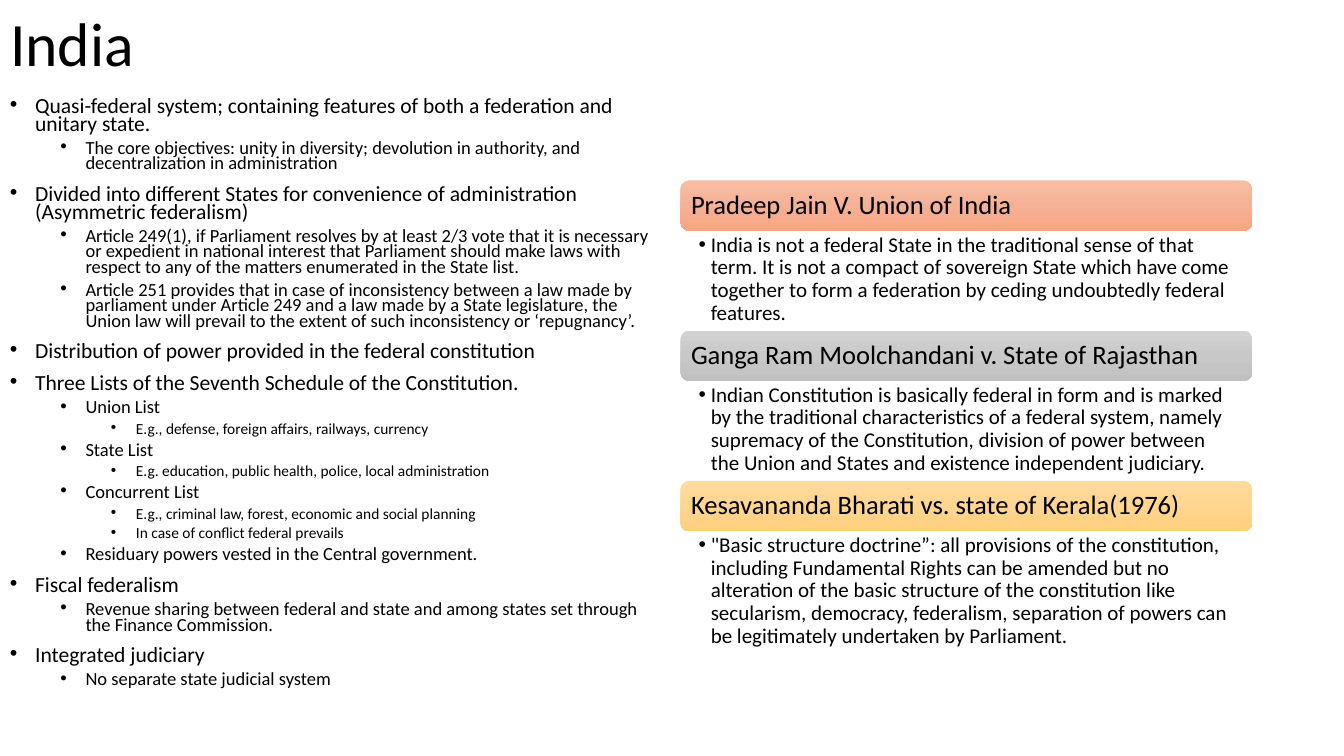
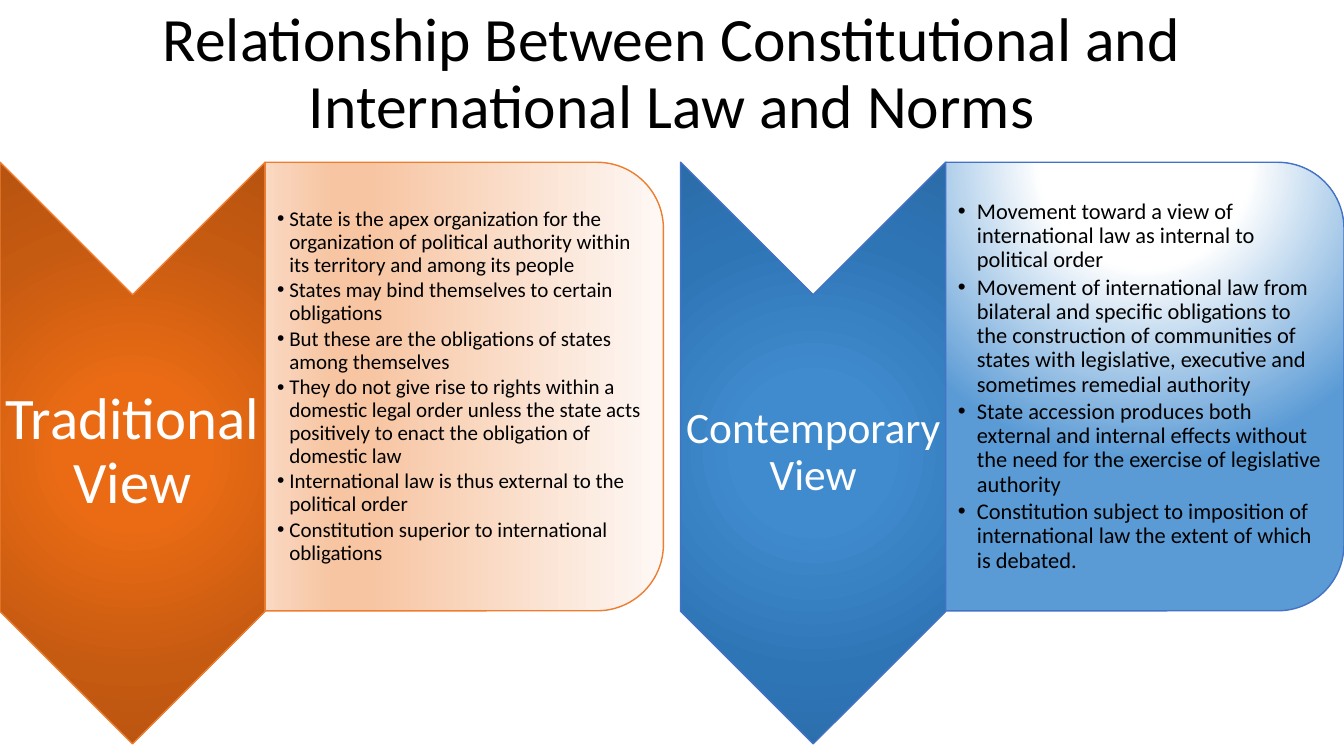
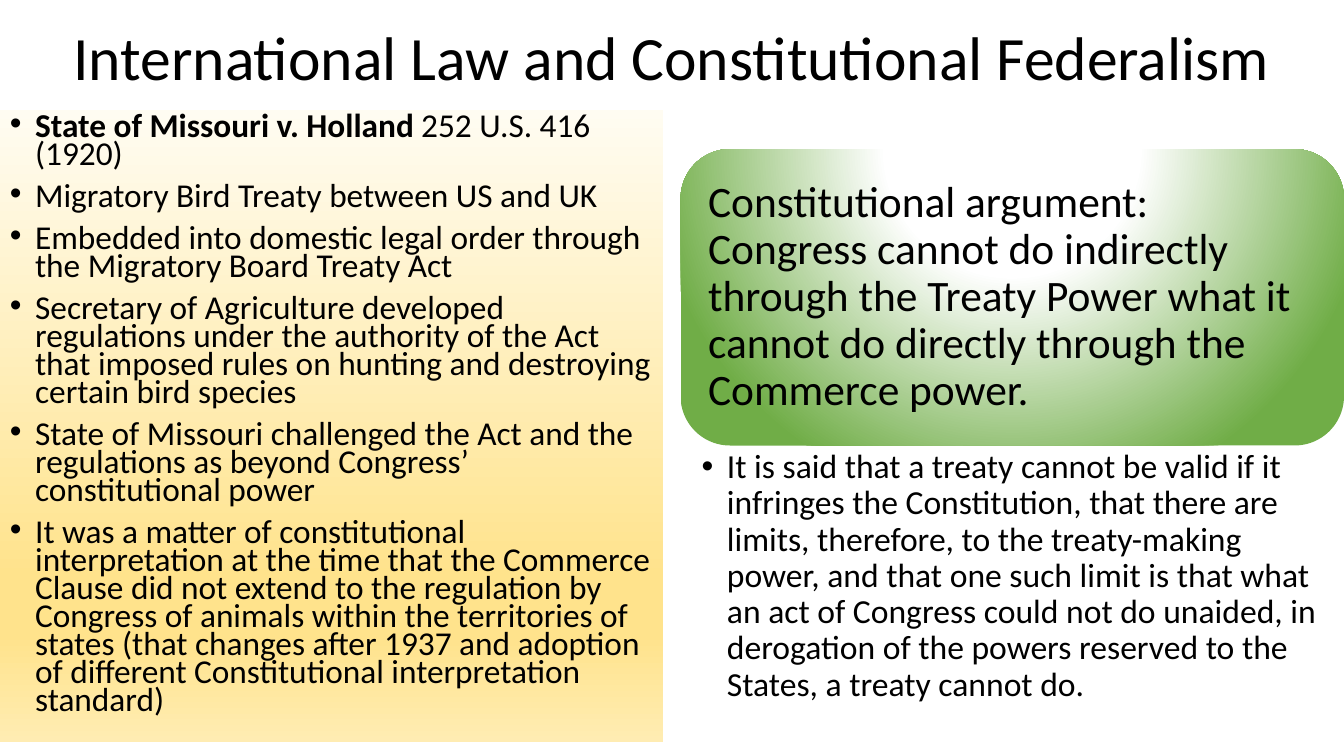
from dataclasses import dataclass
from lxml import etree
from pptx import Presentation
from pptx.dml.color import RGBColor as Rgb
from pptx.enum.shapes import MSO_SHAPE as Shape
from pptx.enum.text import MSO_ANCHOR as Anchor, MSO_AUTO_SIZE as Auto, PP_ALIGN as Align
from pptx.oxml.ns import qn
from pptx.util import Pt

PX = 9144  # EMU in one px, 100 px to the inch
WIDE, HIGH = 1333, 750
HALF, RIGHT = 658, 675  # column width, left edge of second column


# Theme
@dataclass
class Style:
    size: float
    color: str = "000000"
    lines: float = 0.9
    before: float = 0
    after: float = 0  # share of the type size
    left: int = 0
    hang: int = 0  # bullet hangs by this much
    align: Align = Align.LEFT


class Theme:
    font = "Calibri"
    title = Style(44)
    center = Style(44, align=Align.CENTER)
    body = [
        Style(15.4, lines=0.7, before=10, left=25, hang=25),
        Style(13.2, lines=0.7, before=5, left=75, hang=25),
        Style(11, lines=0.7, before=5, left=125, hang=25),
    ]
    facts = [Style(23.8, lines=0.7, before=10, left=25, hang=25)]
    head = [Style(19, after=0.35)]
    case = [Style(15, after=0.2, left=12, hang=12)]
    claim = [Style(31, after=0.35)]
    quote = [Style(24, after=0.2, left=25, hang=25)]
    # Gradients: (stops, focus), linear downwards where focus is None
    center_glow = (50, 50, 50, 50)
    top_glow = (50, -80, 50, 180)
    red = ([(0, "F7BDA5"), (50, "F5B196"), (100, "F8A582")], None)
    gray = ([(0, "D2D2D2"), (50, "C8C8C8"), (100, "C0C0C0")], None)
    gold = ([(0, "FFDB9E"), (50, "FFD590"), (100, "FFD07C")], None)
    cream = ([(0, "FFFCF2"), (74, "FFE38C"), (83, "FFE38C"), (100, "FFECB2")], None)
    peach = ([(0, "FEF8F5"), (74, "F7C5A2"), (83, "F7C5A2"), (100, "FAD8C1")], None)
    rust = ([(0, "EA6B14"), (23, "EA6B14"), (69, "C55A11"), (97, "B85410")], center_glow)
    blue = ([(0, "408BCE"), (23, "408BCE"), (69, "2E75B6"), (97, "2B6DA9")], center_glow)
    sky = ([(0, "FFFFFF"), (35, "FFFFFF"), (100, "5B9BD5")], top_glow)
    green = ([(0, "FFFFFF"), (35, "FFFFFF"), (100, "70AD47")], top_glow)


# Content: (level, text)
INDIA = [
    (0, "Quasi-federal system; containing features of both a federation and unitary state."),
    (1, "The core objectives: unity in diversity; devolution in authority, and decentralization in administration"),
    (0, "Divided into different States for convenience of administration (Asymmetric federalism)"),
    (1, "Article 249(1), if Parliament resolves by at least 2/3 vote that it is necessary or expedient in national "
        "interest that Parliament should make laws with respect to any of the matters enumerated in the State list."),
    (1, "Article 251 provides that in case of inconsistency between a law made by parliament under Article 249 and a "
        "law made by a State legislature, the Union law will prevail to the extent of such inconsistency or "
        "‘repugnancy’."),
    (0, "Distribution of power provided in the federal constitution"),
    (0, "Three Lists of the Seventh Schedule of the Constitution."),
    (1, "Union List"),
    (2, "E.g., defense, foreign affairs, railways, currency"),
    (1, "State List"),
    (2, "E.g. education, public health, police, local administration"),
    (1, "Concurrent List"),
    (2, "E.g., criminal law, forest, economic and social planning"),
    (2, "In case of conflict federal prevails"),
    (1, "Residuary powers vested in the Central government."),
    (0, "Fiscal federalism"),
    (1, "Revenue sharing between federal and state and among states set through the Finance Commission."),
    (0, "Integrated judiciary"),
    (1, "No separate state judicial system"),
]

# Name, finding, height of the finding, gradient
CASES = [
    ("Pradeep Jain V. Union of India",
     "India is not a federal State in the traditional sense of that term. It is not a compact of sovereign State "
     "which have come together to form a federation by ceding undoubtedly federal features.", 99, Theme.red),
    ("Ganga Ram Moolchandani v. State of Rajasthan",
     "Indian Constitution is basically federal in form and is marked by the traditional characteristics of a federal "
     "system, namely supremacy of the Constitution, division of power between the Union and States and existence "
     "independent judiciary.", 99, Theme.gray),
    ("Kesavananda Bharati vs. state of Kerala(1976)",
     "\"Basic structure doctrine”: all provisions of the constitution, including Fundamental Rights can be amended "
     "but no alteration of the basic structure of the constitution like secularism, democracy, federalism, "
     "separation of powers can be legitimately undertaken by Parliament.", 120, Theme.gold),
]

VIEWS = [
    dict(name="Traditional View", size=42, left=0, arrow=Theme.rust, panel=Theme.peach, line="ED7D31",
         pad=3, type=15, hang=12, points=[
             "State is the apex organization for the organization of political authority within its territory and "
             "among its people",
             "States may bind themselves to certain obligations",
             "But these are the obligations of states among themselves",
             "They do not give rise to rights within a domestic legal order unless the state acts positively to enact "
             "the obligation of domestic law",
             "International law is thus external to the political order",
             "Constitution superior to international obligations",
         ]),
    dict(name="Contemporary View", size=31, left=RIGHT, arrow=Theme.blue, panel=Theme.sky, line="4472C4",
         pad=2, type=16, hang=19, points=[
             "Movement toward a view of international law as internal to political order",
             "Movement of international law from bilateral and specific obligations to the construction of "
             "communities of states with legislative, executive and sometimes remedial authority",
             "State accession produces both external and internal effects without the need for the exercise of "
             "legislative authority",
             "Constitution subject to imposition of international law the extent of which is debated.",
         ]),
]

LEAD = "State of Missouri v. Holland "
FACTS = [
    LEAD + "252 U.S. 416 (1920)",
    "Migratory Bird Treaty between US and UK",
    "Embedded into domestic legal order through the Migratory Board Treaty Act",
    "Secretary of Agriculture developed regulations under the authority of the Act that imposed rules on hunting and "
    "destroying certain bird species",
    "State of Missouri challenged the Act and the regulations as beyond Congress’ constitutional power",
    "It was a matter of constitutional interpretation at the time that the Commerce Clause did not extend to the "
    "regulation by Congress of animals within the territories of states (that changes after 1937 and adoption of "
    "different Constitutional interpretation standard)",
]
CLAIM = ("Constitutional argument: Congress cannot do indirectly through the Treaty Power what it cannot do directly "
         "through the Commerce power.")
QUOTE = ("It is said that a treaty cannot be valid if it infringes the Constitution, that there are limits, therefore, "
         "to the treaty-making power, and that one such limit is that what an act of Congress could not do unaided, "
         "in derogation of the powers reserved to the States, a treaty cannot do.")


# Helpers
def emu(box):
    return [round(side * PX) for side in box]


def shade(shape, grad):
    """Fill a shape with a gradient of any number of stops."""
    stops, focus = grad
    shape.fill.background()
    props = shape.fill._xPr
    node = etree.Element(qn("a:gradFill"), rotWithShape="1")
    props.replace(props.find(qn("a:noFill")), node)
    row = etree.SubElement(node, qn("a:gsLst"))
    for pos, color in stops:
        stop = etree.SubElement(row, qn("a:gs"), pos=str(pos * 1000))
        etree.SubElement(stop, qn("a:srgbClr"), val=color)
    if focus:
        ring = etree.SubElement(node, qn("a:path"), path="circle")
        edges = {side: str(val * 1000) for side, val in zip("ltrb", focus)}
        etree.SubElement(ring, qn("a:fillToRect"), edges)
    else:
        etree.SubElement(node, qn("a:lin"), ang="5400000", scaled="0")


def draw(slide, kind, box, grad, line=None, turn=False):
    """Add a preset shape; a turned one still covers the given box."""
    x, y, w, h = box
    if turn:
        x, y, w, h = x + (w - h) / 2, y + (h - w) / 2, h, w
    shape = slide.shapes.add_shape(kind, *emu((x, y, w, h)))
    shape.rotation = 90 if turn else 0
    shape.shadow.inherit = False
    shade(shape, grad)
    if line:
        shape.line.color.rgb = Rgb.from_string(line)
        shape.line.width = Pt(1)
    else:
        shape.line.fill.background()
    return shape


def dress(par, style, first):
    props = par._p.get_or_add_pPr()
    if style.hang:
        props.set("marL", str(style.left * PX))
        props.set("indent", str(-style.hang * PX))
        etree.SubElement(props, qn("a:buFont"), typeface="Arial")
        etree.SubElement(props, qn("a:buChar"), char="•")
    par.alignment = style.align
    par.line_spacing = style.lines
    par.space_before = Pt(0 if first else style.before)
    par.space_after = Pt(round(style.size * style.after, 2))
    for run in par.runs:
        run.font.name = Theme.font
        run.font.size = Pt(style.size)
        run.font.color.rgb = Rgb.from_string(style.color)


def write(shape, items, styles, pad=(10, 5, 10, 5), anchor=Anchor.TOP):
    """Set (level, text) items in a shape, styled by level."""
    frame = shape.text_frame
    frame.word_wrap = True
    frame.auto_size = Auto.NONE
    frame.vertical_anchor = anchor
    (frame.margin_left, frame.margin_top,
     frame.margin_right, frame.margin_bottom) = emu(pad)
    frame.text = "\n".join(text for _, text in items)
    for num, (par, (level, _)) in enumerate(zip(frame.paragraphs, items)):
        dress(par, styles[level], num == 0)


def label(slide, box, *rest, **more):
    shape = slide.shapes.add_textbox(*emu(box))
    write(shape, *rest, **more)


def start(deck, text, box, style):
    """Add a slide with its title."""
    slide = deck.slides.add_slide(deck.slide_layouts[5])
    title = slide.shapes.title
    title.left, title.top, title.width, title.height = emu(box)
    write(title, [(0, text)], [style], anchor=Anchor.MIDDLE)
    return slide


# Slides
def india(deck):
    slide = start(deck, "India", (0, 0, 285, 93), Theme.title)
    label(slide, (0, 93, HALF, 657), INDIA, Theme.body)
    top, wide, bar = 179, 567, 50
    for name, text, high, grad in CASES:
        head = draw(slide, Shape.ROUNDED_RECTANGLE, (RIGHT, top, wide, bar), grad)
        write(head, [(0, name)], Theme.head, (8, 8, 8, 8), Anchor.MIDDLE)
        label(slide, (RIGHT, top + bar, wide, high), [(0, text)], Theme.case, (18, 3, 15, 3))
        top += bar + high


def views(deck):
    slide = start(deck, "Relationship Between Constitutional and International Law and Norms",
                  (0, 2, WIDE, 145), Theme.center)
    top, wide = 161, 263
    for view in VIEWS:
        x = view["left"]
        # Arrow and its name
        draw(slide, Shape.CHEVRON, (x, top, wide, 577), view["arrow"], view["line"], turn=True)
        name = Style(view["size"], "FFFFFF", after=0.35, align=Align.CENTER)
        label(slide, (x, 292, wide, 314), [(0, view["name"])], [name],
              (view["pad"],) * 4, Anchor.MIDDLE)
        # Panel and its points
        draw(slide, Shape.ROUND_2_SAME_RECTANGLE, (x + wide, top, HALF - wide, 445),
             view["panel"], view["line"], turn=True)
        point = Style(view["type"], after=0.15, left=view["hang"], hang=view["hang"])
        label(slide, (x + wide, 180, 376, 407), [(0, text) for text in view["points"]],
              [point], (12, 1, 1, 1), Anchor.MIDDLE)


def treaty(deck):
    slide = start(deck, "International Law and Constitutional Federalism",
                  (0, 0, WIDE, 120), Theme.center)
    # Facts, with the case name in bold
    facts = draw(slide, Shape.RECTANGLE, (0, 109, HALF, 627), Theme.cream)
    write(facts, [(0, text) for text in FACTS], Theme.facts)
    first = facts.text_frame.paragraphs[0]
    first.text = LEAD
    first.add_run().text = FACTS[0][len(LEAD):]
    dress_runs = Theme.facts[0]
    for run, bold in zip(first.runs, (True, False)):
        run.font.name = Theme.font
        run.font.size = Pt(dress_runs.size)
        run.font.color.rgb = Rgb.from_string(dress_runs.color)
        run.font.bold = bold
    # Argument and quote
    claim = draw(slide, Shape.ROUNDED_RECTANGLE, (RIGHT, 148, HALF, 294), Theme.green)
    write(claim, [(0, CLAIM)], Theme.claim, (13, 13, 13, 13), Anchor.MIDDLE)
    label(slide, (RIGHT, 442, HALF, 267), [(0, QUOTE)], Theme.quote, (21, 4, 24, 4))


def main():
    deck = Presentation()
    deck.slide_width, deck.slide_height = emu((WIDE, HIGH))
    for build in (india, views, treaty):
        build(deck)
    deck.save("out.pptx")


if __name__ == "__main__":
    main()
